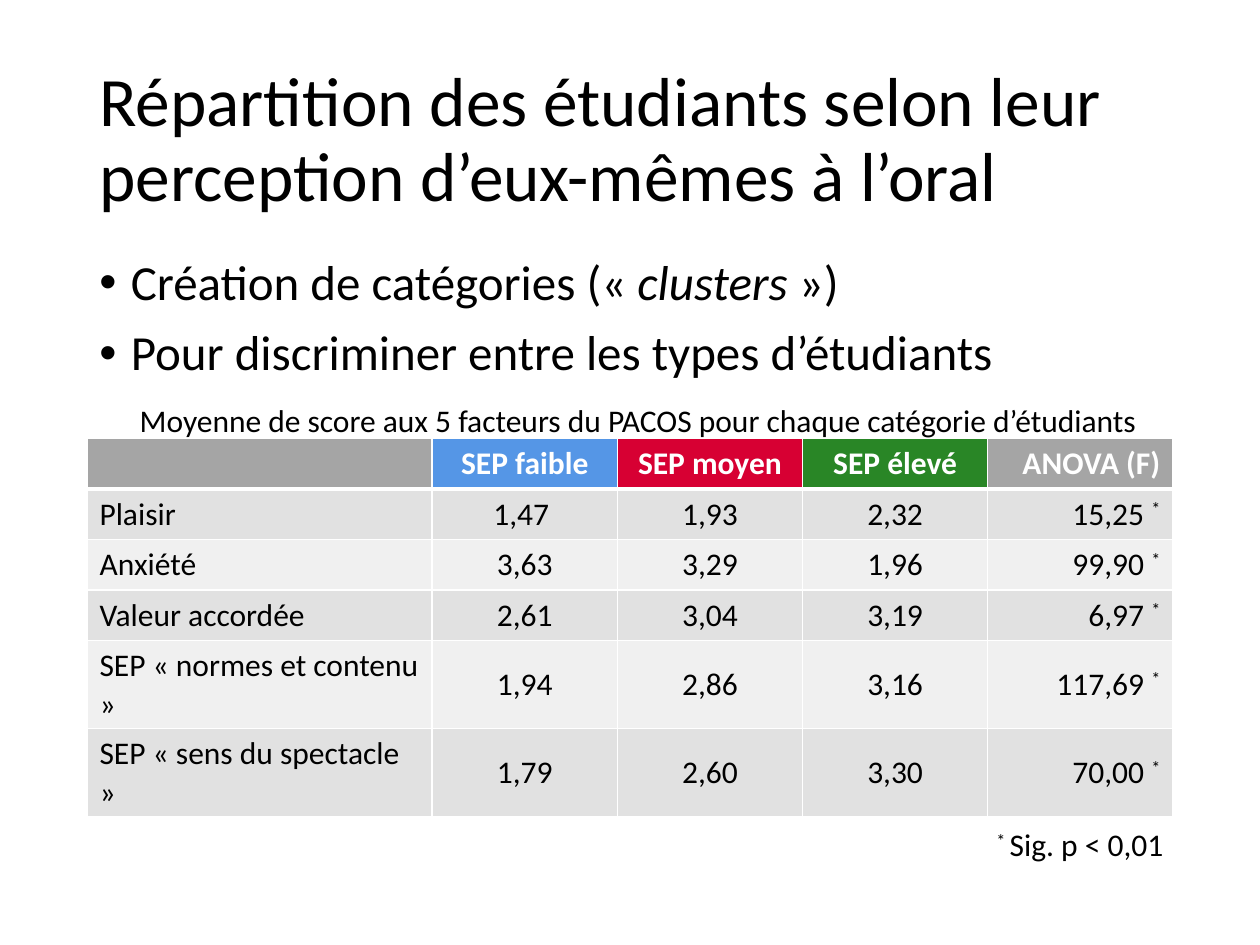
from dataclasses import dataclass

import pptx
import pptx.dml.color
import pptx.enum.text
import pptx.oxml.ns
import pptx.util
from lxml import etree
from pptx.dml.color import RGBColor
from pptx.util import Inches

ALIGN = pptx.enum.text.PP_ALIGN
ANCHOR = pptx.enum.text.MSO_ANCHOR
FONT = "Calibri"

BLACK = RGBColor(0x00, 0x00, 0x00)
WHITE = RGBColor(0xFF, 0xFF, 0xFF)
GRAY = RGBColor(0xA5, 0xA5, 0xA5)
BLUE = RGBColor(0x55, 0x96, 0xE6)
RED = RGBColor(0xD7, 0x00, 0x33)
GREEN = RGBColor(0x29, 0x86, 0x26)
BANDS = (RGBColor(0xE1, 0xE1, 0xE1), RGBColor(0xF0, 0xF0, 0xF0))

LEFT, WIDTH = 0.69, 8.62
SCORE_WIDTH = 1.47


@dataclass
class Span:
    text: str
    italic: bool = False
    raised: bool = False


@dataclass
class Heading:
    text: str
    fill: RGBColor
    align: ALIGN = ALIGN.CENTER


@dataclass
class Factor:
    name: str
    scores: tuple[str, str, str]
    anova: str
    height: float = 0.4


HEADINGS = [
    Heading("", GRAY),
    Heading("SEP faible", BLUE),
    Heading("SEP moyen", RED),
    Heading("SEP élevé", GREEN),
    Heading("ANOVA (F)", GRAY, ALIGN.RIGHT),
]
FACTORS = [
    Factor("Plaisir", ("1,47 ", "1,93", "2,32"), "15,25 "),
    Factor("Anxiété", ("3,63", "3,29", "1,96"), "99,90 "),
    Factor("Valeur accordée", ("2,61", "3,04", "3,19"), "6,97 "),
    Factor("SEP « normes et contenu »", ("1,94", "2,86", "3,16"), "117,69 ", 0.7),
    Factor("SEP « sens du spectacle »", ("1,79", "2,60", "3,30"), "70,00 ", 0.7),
]


def write(para, *spans: Span, size: float = 18, color: RGBColor = BLACK,
          bold: bool = False, align: ALIGN = ALIGN.LEFT) -> None:
    """Fill a paragraph with spans that share one basic format."""
    para.alignment = align
    for span in spans:
        run = para.add_run()
        run.text = span.text
        font = run.font
        font.name, font.size, font.bold = FONT, pptx.util.Pt(size), bold
        font.italic = span.italic
        font.color.rgb = color
        if span.raised:
            font._element.set("baseline", "30000")


def add_box(page, left: float, top: float, width: float, height: float,
            wrap: bool = True, anchor: ANCHOR = ANCHOR.TOP):
    """Add a text box and return its text frame."""
    frame = page.shapes.add_textbox(
        Inches(left), Inches(top), Inches(width), Inches(height)).text_frame
    frame.word_wrap = wrap
    frame.vertical_anchor = anchor
    if not wrap:
        frame.auto_size = pptx.enum.text.MSO_AUTO_SIZE.SHAPE_TO_FIT_TEXT
    return frame


def add_bullet(para) -> None:
    properties = para._p.get_or_add_pPr()
    properties.set("marL", str(Inches(0.25)))
    properties.set("indent", str(-Inches(0.25)))
    for tag, name, value in (("a:buFont", "typeface", "Arial"),
                             ("a:buChar", "char", "•")):
        etree.SubElement(properties, pptx.oxml.ns.qn(tag)).set(name, value)


def set_borders(cell, top: float = 1, bottom: float = 1) -> None:
    """Draw white cell borders, with widths in points."""
    properties = cell._tc.get_or_add_tcPr()
    qn = pptx.oxml.ns.qn
    sides = (("L", 1), ("R", 1), ("T", top), ("B", bottom))
    for position, (side, width) in enumerate(sides):
        line = etree.Element(qn(f"a:ln{side}"), w=str(pptx.util.Pt(width)))
        fill = etree.SubElement(line, qn("a:solidFill"))
        etree.SubElement(fill, qn("a:srgbClr"), val=str(WHITE))
        properties.insert(position, line)


def fill_cell(cell, *spans: Span, fill: RGBColor, top: float = 1, bottom: float = 1,
              anchor: ANCHOR = ANCHOR.MIDDLE, **text_format) -> None:
    cell.fill.solid()
    cell.fill.fore_color.rgb = fill
    cell.vertical_anchor = anchor
    set_borders(cell, top, bottom)
    write(cell.text_frame.paragraphs[0], *spans, **text_format)


def add_score_table(page) -> None:
    heights = [0.4] + [factor.height for factor in FACTORS]
    table = page.shapes.add_table(
        len(heights), len(HEADINGS), Inches(LEFT), Inches(3.48),
        Inches(WIDTH), Inches(sum(heights))).table
    for row, height in zip(table.rows, heights):
        row.height = Inches(height)
    for index, column in enumerate(table.columns):
        column.width = Inches(SCORE_WIDTH if index else WIDTH - 4 * SCORE_WIDTH)

    # Header row, set off by a thick rule
    for column, heading in enumerate(HEADINGS):
        fill_cell(table.cell(0, column), Span(heading.text), fill=heading.fill,
                  bottom=3, color=WHITE, bold=True, align=heading.align)

    # One banded row per factor
    for row, factor in enumerate(FACTORS, start=1):
        style = {"fill": BANDS[(row - 1) % 2], "top": 3 if row == 1 else 1}
        fill_cell(table.cell(row, 0), Span(factor.name), anchor=ANCHOR.TOP, **style)
        for column, score in enumerate(factor.scores, start=1):
            fill_cell(table.cell(row, column), Span(score),
                      align=ALIGN.CENTER, **style)
        fill_cell(table.cell(row, 4), Span(factor.anova), Span("*", raised=True),
                  align=ALIGN.RIGHT, **style)


def main() -> None:
    deck = pptx.Presentation()
    deck.slide_width, deck.slide_height = Inches(10), Inches(7.5)
    page = deck.slides.add_slide(deck.slide_layouts[6])

    # Title
    title = add_box(page, LEFT, 0.4, WIDTH, 1.45, anchor=ANCHOR.MIDDLE).paragraphs[0]
    title.line_spacing = 0.9
    write(title, Span("Répartition des étudiants selon leur perception "
                      "d’eux-mêmes à l’oral"), size=39.6)

    # Bullet points
    body = add_box(page, LEFT, 2, WIDTH, 1.1)
    points = [
        [Span("Création de catégories (« "), Span("clusters", italic=True), Span(" »)")],
        [Span("Pour discriminer entre les types d’étudiants")],
    ]
    for index, spans in enumerate(points):
        para = body.add_paragraph() if index else body.paragraphs[0]
        para.line_spacing = 0.9
        para.space_before = pptx.util.Pt(10)
        add_bullet(para)
        write(para, *spans, size=28)

    # Table with its caption and footnote
    add_score_table(page)
    note = add_box(page, 7.81, 6.5, 1.62, 0.4, wrap=False)
    write(note.paragraphs[0], Span("* ", raised=True), Span("Sig. p < 0,01"))
    caption = add_box(page, 1.01, 3.13, 8.21, 0.4, wrap=False)
    write(caption.paragraphs[0], Span("Moyenne de score aux 5 facteurs du PACOS "
                                      "pour chaque catégorie d’étudiants"))

    deck.save("out.pptx")


if __name__ == "__main__":
    main()
